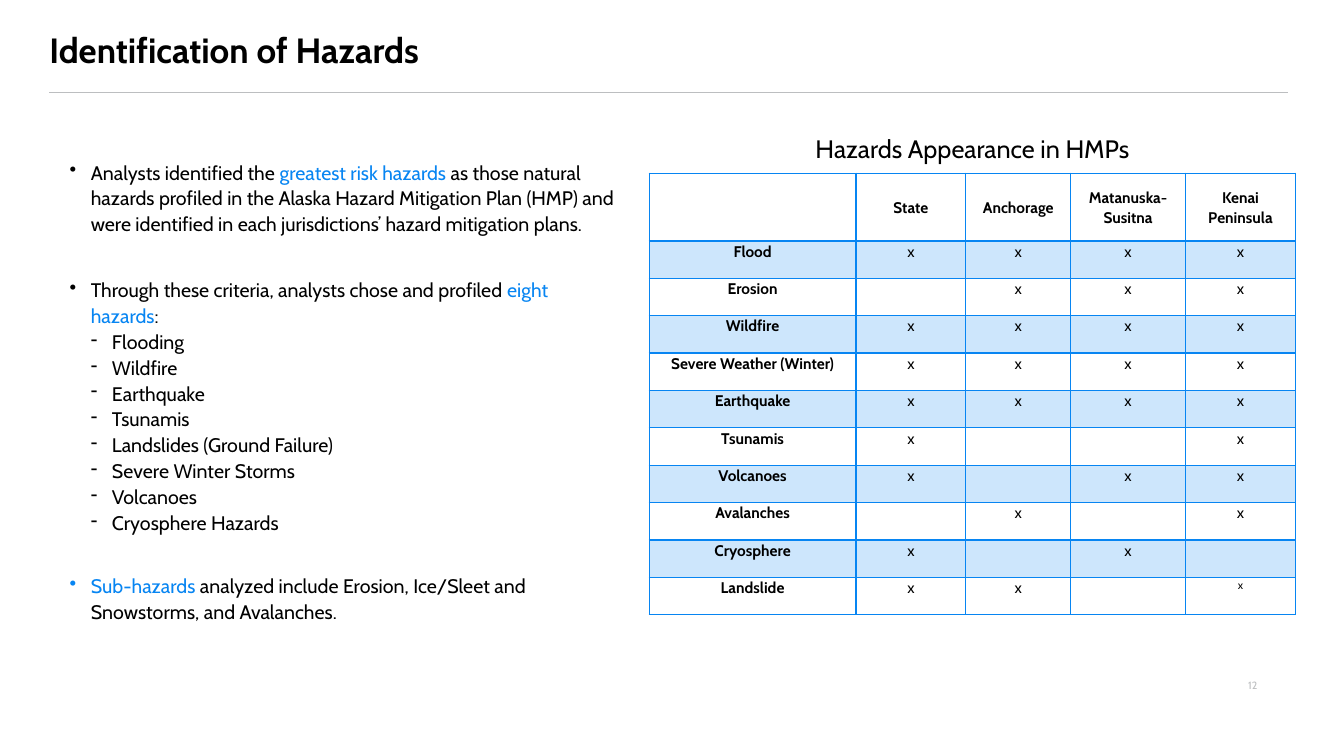
"""Build the slide on identified hazards and their appearance in mitigation plans."""
from dataclasses import dataclass

from lxml import etree
from pptx import Presentation
from pptx.dml.color import RGBColor
from pptx.enum.shapes import MSO_CONNECTOR
from pptx.enum.text import MSO_ANCHOR, PP_ALIGN
from pptx.oxml.ns import qn
from pptx.util import Inches, Pt

LEFT, CENTER, RIGHT = PP_ALIGN.LEFT, PP_ALIGN.CENTER, PP_ALIGN.RIGHT
TOP, MIDDLE = MSO_ANCHOR.TOP, MSO_ANCHOR.MIDDLE
STRAIGHT = MSO_CONNECTOR.STRAIGHT

FONT = "Cabin"
COLORS = {"text": "000000", "accent": "0785F2", "muted": "BCBEC0"}
WIDTH, HEIGHT = Inches(13.33), Inches(7.5)
INDENT = Inches(0.21)


@dataclass
class Area:
    """A rectangle in percent of the slide's width and height."""

    left: float
    top: float
    width: float
    height: float

    def lengths(self) -> tuple[int, int, int, int]:
        return across(self.left), down(self.top), across(self.width), down(self.height)


@dataclass
class Label:
    """A box holding one line of text."""

    text: str
    area: Area
    size: float
    color: str = "text"
    bold: bool = False
    align: PP_ALIGN = LEFT
    anchor: MSO_ANCHOR = TOP
    side_inset: float = 0.1
    spacing: float = 1.0


@dataclass
class Point:
    """A bulleted paragraph made of (text, colour) spans."""

    spans: list[tuple[str, str]]
    level: int = 0
    before: float = 0


@dataclass
class Hazard:
    """A table row: hazard name and one mark per plan ('x' or '-')."""

    name: str
    marks: str


LABELS = [
    Label("Identification of Hazards", Area(3.68, 1.33, 81.4, 11.07), 25,
          bold=True, anchor=MIDDLE, side_inset=0, spacing=0.9),
    Label("12", Area(74.49, 88, 19.8, 5.33), 7.5, "muted", align=RIGHT, anchor=MIDDLE),
    Label("Hazards Appearance in HMPs", Area(48.31, 16.93, 48.09, 5.33), 18, align=CENTER),
]
PROFILED = ["Flooding", "Wildfire", "Earthquake", "Tsunamis", "Landslides (Ground Failure)",
            "Severe Winter Storms", "Volcanoes", "Cryosphere Hazards"]
POINTS = [
    Point([("Analysts identified the ", "text"), ("greatest risk hazards ", "accent"),
           ("as those natural hazards profiled in the Alaska Hazard Mitigation Plan (HMP) and "
            "were identified in each jurisdictions’ hazard mitigation plans.", "text")]),
    Point([("Through these criteria, analysts chose and profiled ", "text"),
           ("eight hazards", "accent"), (":", "text")], before=28.5),
    *[Point([(name, "text")], level=1) for name in PROFILED],
    Point([("Sub-hazards", "accent"),
           (" analyzed include Erosion, Ice/Sleet and Snowstorms, and Avalanches.", "text")],
          before=26.8),
]
POINTS_AREA = Area(5.18, 20.27, 40.66, 68)

PLANS = ["", "State", "Anchorage", "Matanuska-Susitna", "Kenai Peninsula"]
HAZARDS = [
    Hazard("Flood", "xxxx"), Hazard("Erosion", "-xxx"), Hazard("Wildfire", "xxxx"),
    Hazard("Severe Weather (Winter)", "xxxx"), Hazard("Earthquake", "xxxx"),
    Hazard("Tsunamis", "x--x"), Hazard("Volcanoes", "x-xx"), Hazard("Avalanches", "-x-x"),
    Hazard("Cryosphere", "x-x-"), Hazard("Landslide", "xx-x"),
]
TABLE_AREA = Area(48.31, 22.93, 48.09, 58.4)
COLUMN_SHARES = [15.38, 8.18, 7.8, 8.55, 8.18]
HEADER_SHARE, ROW_SHARE = 8.93, 4.95


def across(share: float) -> int:
    return round(WIDTH * share / 100)


def down(share: float) -> int:
    return round(HEIGHT * share / 100)


def style(font, size: float, color: str, bold: bool = False) -> None:
    font.name, font.size, font.bold = FONT, Pt(size), bold
    font.color.rgb = RGBColor.from_string(COLORS[color])


def add_solid(parent, color: str, alpha: int = 100) -> None:
    solid = etree.SubElement(parent, qn("a:solidFill"))
    value = etree.SubElement(solid, qn("a:srgbClr"), val=COLORS[color])
    if alpha < 100:
        etree.SubElement(value, qn("a:alpha"), val=str(alpha * 1000))


def add_frame(page, area: Area, side_inset: float):
    frame = page.shapes.add_textbox(*area.lengths()).text_frame
    frame.word_wrap = True
    frame.margin_left = frame.margin_right = Inches(side_inset)
    return frame


def add_label(page, label: Label) -> None:
    frame = add_frame(page, label.area, label.side_inset)
    frame.vertical_anchor = label.anchor
    frame.text = label.text
    para = frame.paragraphs[0]
    para.alignment, para.line_spacing = label.align, label.spacing
    style(para.runs[0].font, label.size, label.color, label.bold)


def add_points(page, points: list[Point]) -> None:
    frame = add_frame(page, POINTS_AREA, 0)
    for index, point in enumerate(points):
        para = frame.add_paragraph() if index else frame.paragraphs[0]
        para.level = point.level
        properties = para._p.get_or_add_pPr()
        properties.set("marL", str(INDENT * (point.level + 1)))
        properties.set("indent", str(-INDENT))
        tint = etree.SubElement(properties, qn("a:buClr"))
        etree.SubElement(tint, qn("a:srgbClr"), val=COLORS[point.spans[0][1]])
        etree.SubElement(properties, qn("a:buChar"), char="-" if point.level else "•")
        para.line_spacing, para.space_before = 1.1, Pt(point.before)
        for text, color in point.spans:
            span = para.add_run()
            span.text = text
            style(span.font, 14, color)


def format_cell(cell, row: int, text: str, size: float, bold: bool) -> None:
    cell.margin_left = cell.margin_right = Inches(0.07)
    cell.margin_top = cell.margin_bottom = 0
    cell.vertical_anchor = TOP if row else MIDDLE
    cell.text = text
    para = cell.text_frame.paragraphs[0]
    para.alignment, para.line_spacing = CENTER, 1.07
    for span in para.runs:
        style(span.font, size, "text", bold)
    properties = cell._tc.get_or_add_tcPr()
    for side in "LRTB":
        thick = (row, side) in [(0, "B"), (1, "T")]
        border = etree.SubElement(properties, qn(f"a:ln{side}"), w=str(Pt(2 if thick else 1)))
        add_solid(border, "accent")
    if row % 2:
        add_solid(properties, "accent", 20)
    else:
        etree.SubElement(properties, qn("a:noFill"))


def add_hazard_table(page) -> None:
    rows = [PLANS] + [[hazard.name, *hazard.marks.replace("-", " ")] for hazard in HAZARDS]
    table = page.shapes.add_table(len(rows), len(PLANS), *TABLE_AREA.lengths()).table
    table.first_row = table.horz_banding = False
    for column, share in zip(table.columns, COLUMN_SHARES):
        column.width = across(share)
    last = (len(rows) - 1, len(PLANS) - 1)
    for row, texts in enumerate(rows):
        table.rows[row].height = down(ROW_SHARE if row else HEADER_SHARE)
        for column, text in enumerate(texts):
            size = 8 if (row, column) == last else 11
            format_cell(table.cell(row, column), row, text.strip(), size, row == 0 or column == 0)


def add_title_rule(page) -> None:
    rule = page.shapes.add_connector(STRAIGHT, across(3.68), down(12.27), across(95.8), down(12.27))
    rule.line.color.rgb = RGBColor.from_string(COLORS["muted"])
    rule.line.width = Pt(0.5)
    etree.SubElement(rule._element.spPr, qn("a:effectLst"))


def main() -> None:
    deck = Presentation()
    deck.slide_width, deck.slide_height = WIDTH, HEIGHT
    page = deck.slides.add_slide(deck.slide_layouts[6])
    add_title_rule(page)
    add_points(page, POINTS)
    add_hazard_table(page)
    for label in LABELS:
        add_label(page, label)
    deck.save("out.pptx")


if __name__ == "__main__":
    main()
